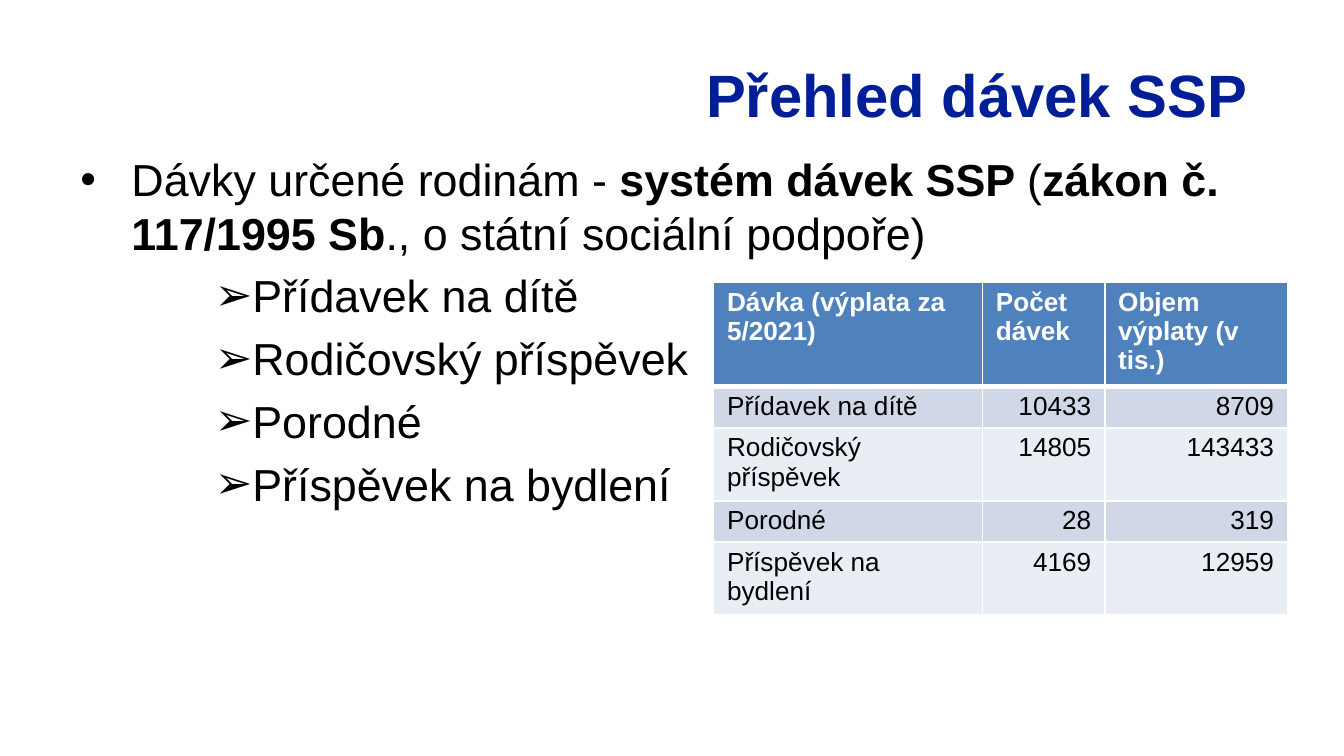
from lxml import etree
from pptx import Presentation
from pptx.dml.color import RGBColor
from pptx.enum.text import MSO_ANCHOR, PP_ALIGN
from pptx.oxml.ns import qn
from pptx.util import Inches, Pt

LEFT, RIGHT = PP_ALIGN.LEFT, PP_ALIGN.RIGHT
TOP, MIDDLE = MSO_ANCHOR.TOP, MSO_ANCHOR.MIDDLE
FONT = "Arial"
COLORS = {
    "title": "001E96", "text": "000000", "white": "FFFFFF",
    "header": "4F81BD", "odd": "D0D8E8", "even": "E9EDF4",
}


class SlideBuilder:
    def __init__(self, page):
        self.page = page

    def span(self, para, text, size, color="text", bold=False):
        span = para.add_run()
        span.text = text
        span.font.name = FONT
        span.font.size = Pt(size)
        span.font.bold = bold
        span.font.color.rgb = RGBColor.from_string(COLORS[color])

    def text_box(self, left, top, width, height, anchor=TOP):
        box = self.page.shapes.add_textbox(
            Inches(left), Inches(top), Inches(width), Inches(height))
        frame = box.text_frame
        frame.word_wrap = True
        frame.vertical_anchor = anchor
        return frame

    def bullet(self, para, symbol, indent, hanging):
        para.space_before = Pt(4.8)
        properties = para._p.get_or_add_pPr()
        properties.set("marL", str(Inches(indent)))
        properties.set("indent", str(-Inches(hanging)))
        etree.SubElement(properties, qn("a:buFont")).set("typeface", FONT)
        etree.SubElement(properties, qn("a:buChar")).set("char", symbol)

    def border(self, cell, side, width):
        line = etree.SubElement(
            cell._tc.get_or_add_tcPr(), qn(f"a:ln{side}"), w=str(Pt(width)))
        fill = etree.SubElement(line, qn("a:solidFill"))
        etree.SubElement(fill, qn("a:srgbClr"), val=COLORS["white"])

    def cell(self, cell, text, fill, color, bold, align, bottom):
        cell.margin_top = cell.margin_bottom = Pt(2.7)
        for side in "LRT":
            self.border(cell, side, 1)
        self.border(cell, "B", bottom)
        cell.fill.solid()
        cell.fill.fore_color.rgb = RGBColor.from_string(COLORS[fill])
        para = cell.text_frame.paragraphs[0]
        para.alignment = align
        self.span(para, text, 14, color, bold)

    def table(self, left, top, widths, heights, rows):
        table = self.page.shapes.add_table(
            len(rows), len(widths), Inches(left), Inches(top),
            Inches(sum(widths)), Inches(sum(heights))).table
        for column, width in zip(table.columns, widths):
            column.width = Inches(width)
        for r, (row, height) in enumerate(zip(rows, heights)):
            table.rows[r].height = Inches(height)
            header = r == 0
            fill = "header" if header else ("odd" if r % 2 else "even")
            for c, text in enumerate(row):
                self.cell(table.cell(r, c), text, fill,
                          "white" if header else "text", header,
                          LEFT if header or c == 0 else RIGHT,
                          3 if header else 1)


deck = Presentation()
deck.slide_width = Inches(10)
deck.slide_height = Inches(10 * 9 / 16)
builder = SlideBuilder(deck.slides.add_slide(deck.slide_layouts[6]))

# Title
para = builder.text_box(0.5, 0.23, 9, 0.94, MIDDLE).paragraphs[0]
para.alignment = RIGHT
builder.span(para, "Přehled dávek SSP ", 32, "title", True)

# Introduction and list of benefits
body = builder.text_box(0.5, 1.08, 9, 3.94)
intro = body.paragraphs[0]
builder.bullet(intro, "•", 0.38, 0.38)
for text, bold in [
    ("Dávky určené rodinám - ", False),
    ("systém dávek SSP ", True),
    ("(", False),
    ("zákon č. 117/1995 Sb", True),
    ("., o státní sociální podpoře)", False),
]:
    builder.span(intro, text, 24, bold=bold)

benefits = [
    ("Přídavek na dítě", "10433", "8709"),
    ("Rodičovský příspěvek", "14805", "143433"),
    ("Porodné", "28", "319"),
    ("Příspěvek na bydlení", "4169", "12959"),
]
for name, *_ in benefits:
    para = body.add_paragraph()
    builder.bullet(para, "➢", 1.25, 0.25)
    builder.span(para, name, 24)

# Table of payments
header = ("Dávka (výplata za 5/2021)", "Počet dávek", "Objem výplaty (v tis.)")
builder.table(5.31, 2.1, [2, 0.91, 1.36], [0.68, 0.29, 0.49, 0.29, 0.48],
              [header] + benefits)

deck.save("out.pptx")
